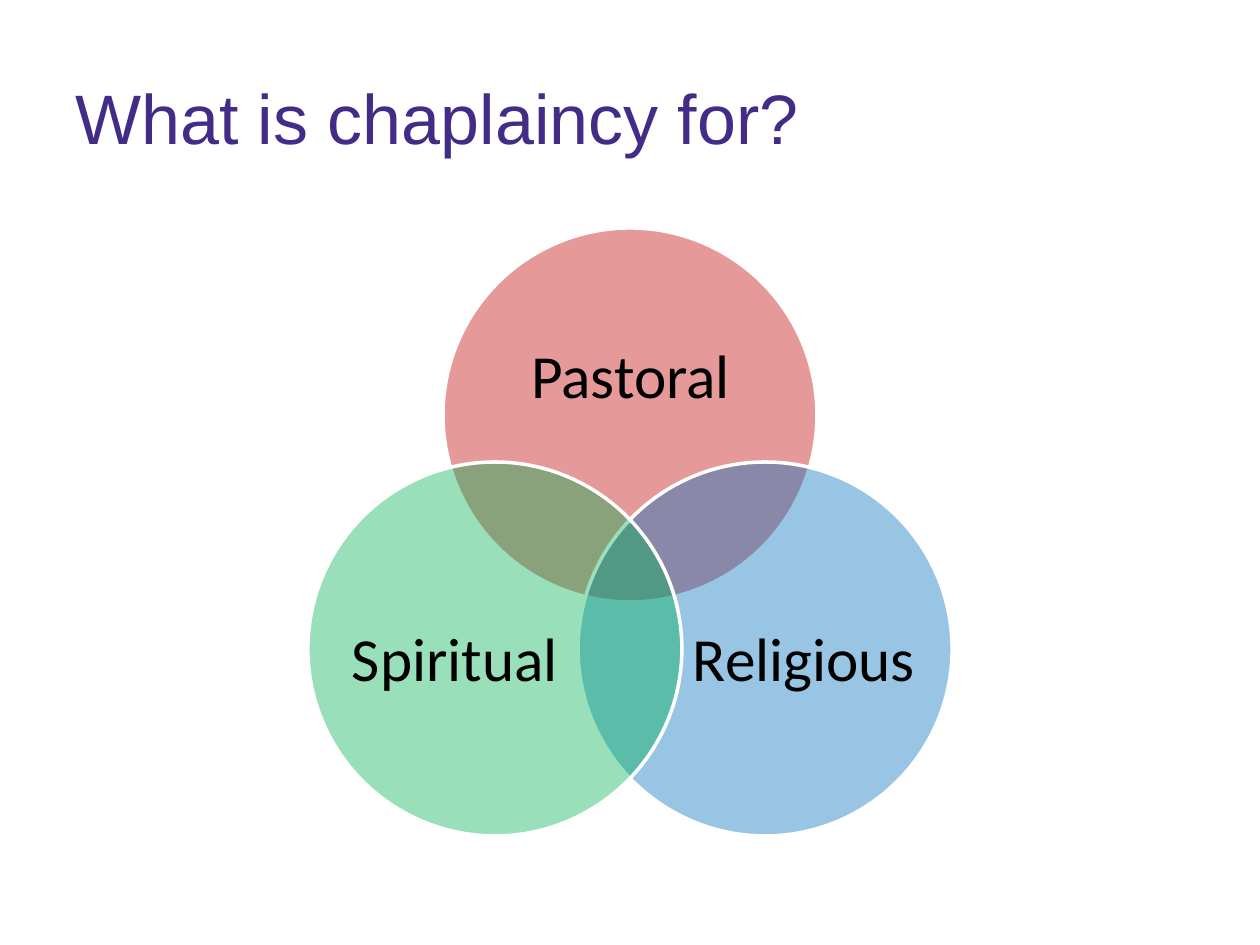
"""Build a slide with a title and a three-circle Venn diagram."""
from math import cos, radians, sin

from lxml import etree
from pptx import Presentation
from pptx.dml.color import RGBColor
from pptx.enum.shapes import MSO_SHAPE
from pptx.enum.text import MSO_ANCHOR, PP_ALIGN
from pptx.oxml.ns import qn
from pptx.util import Pt

OVAL = MSO_SHAPE.OVAL
MIDDLE = MSO_ANCHOR.MIDDLE
LEFT, CENTER = PP_ALIGN.LEFT, PP_ALIGN.CENTER

TITLE = "What is chaplaincy for?"
TITLE_BOX = (63, 38, 1134, 157)
CIRCLES = [
    {"text": "Pastoral", "angle": -90, "fill": "C00000", "label": (493, 294, 275, 169)},
    {"text": "Religious", "angle": 30, "fill": "0070C0", "label": (692, 559, 224, 205)},
    {"text": "Spiritual", "angle": 150, "fill": "00B050", "label": (343, 559, 224, 205)},
]
VENN_CENTER = (630, 571)
VENN_RADIUS = 156
DIAMETER = 374

THEME = {
    "title": {"font": "Arial", "size": 40, "color": "422C88"},
    "label": {"font": "Calibri", "size": 35, "color": "000000"},
    "outline": "FFFFFF",
    "outline_width": 2,
    "opacity": 40,
}


def px(n):
    return round(n * 914400 / 126)


def add_text(s, text, box, style, align, inset=None, spacing=None):
    tf = s.shapes.add_textbox(*map(px, box)).text_frame
    tf.word_wrap = True
    tf.vertical_anchor = MIDDLE
    if inset is not None:
        tf.margin_left = tf.margin_top = tf.margin_right = tf.margin_bottom = px(inset)
    p = tf.paragraphs[0]
    p.text = text
    p.alignment = align
    p.line_spacing = spacing
    p.font.name = style["font"]
    p.font.size = Pt(style["size"])
    p.font.color.rgb = RGBColor.from_string(style["color"])


def add_circle(s, angle, fill):
    x, y = VENN_CENTER
    left = x + VENN_RADIUS * cos(radians(angle)) - DIAMETER / 2
    top = y + VENN_RADIUS * sin(radians(angle)) - DIAMETER / 2
    sp = s.shapes.add_shape(OVAL, *map(px, (left, top, DIAMETER, DIAMETER)))
    sp.shadow.inherit = False
    sp.fill.solid()
    sp.fill.fore_color.rgb = RGBColor.from_string(fill)
    color = sp.fill._xPr.find(qn("a:solidFill"))[0]
    etree.SubElement(color, qn("a:alpha")).set("val", str(THEME["opacity"] * 1000))
    sp.line.color.rgb = RGBColor.from_string(THEME["outline"])
    sp.line.width = Pt(THEME["outline_width"])


def main():
    prs = Presentation()
    prs.slide_width, prs.slide_height = px(1260), px(945)
    s = prs.slides.add_slide(prs.slide_layouts[6])
    add_text(s, TITLE, TITLE_BOX, THEME["title"], LEFT)
    for c in CIRCLES:
        add_circle(s, c["angle"], c["fill"])
        add_text(s, c["text"], c["label"], THEME["label"], CENTER, inset=0, spacing=0.9)
    prs.save("out.pptx")


if __name__ == "__main__":
    main()
